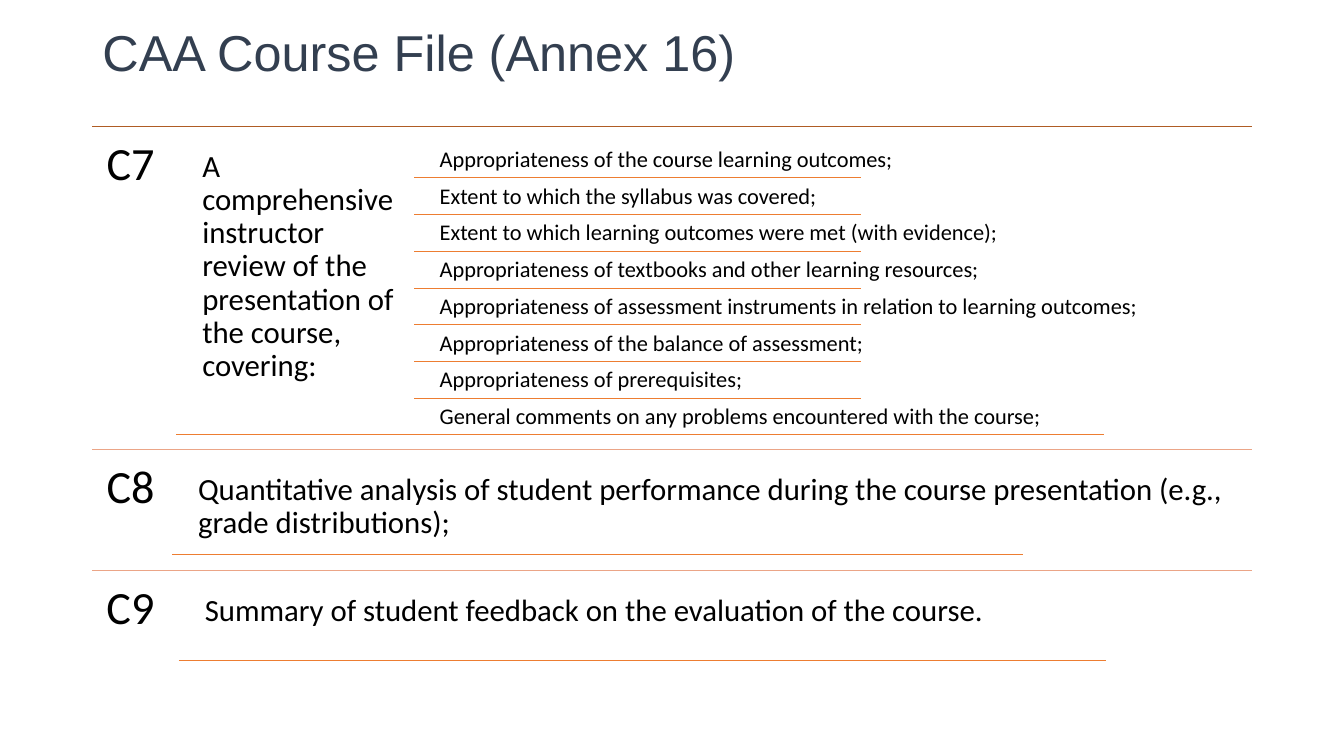
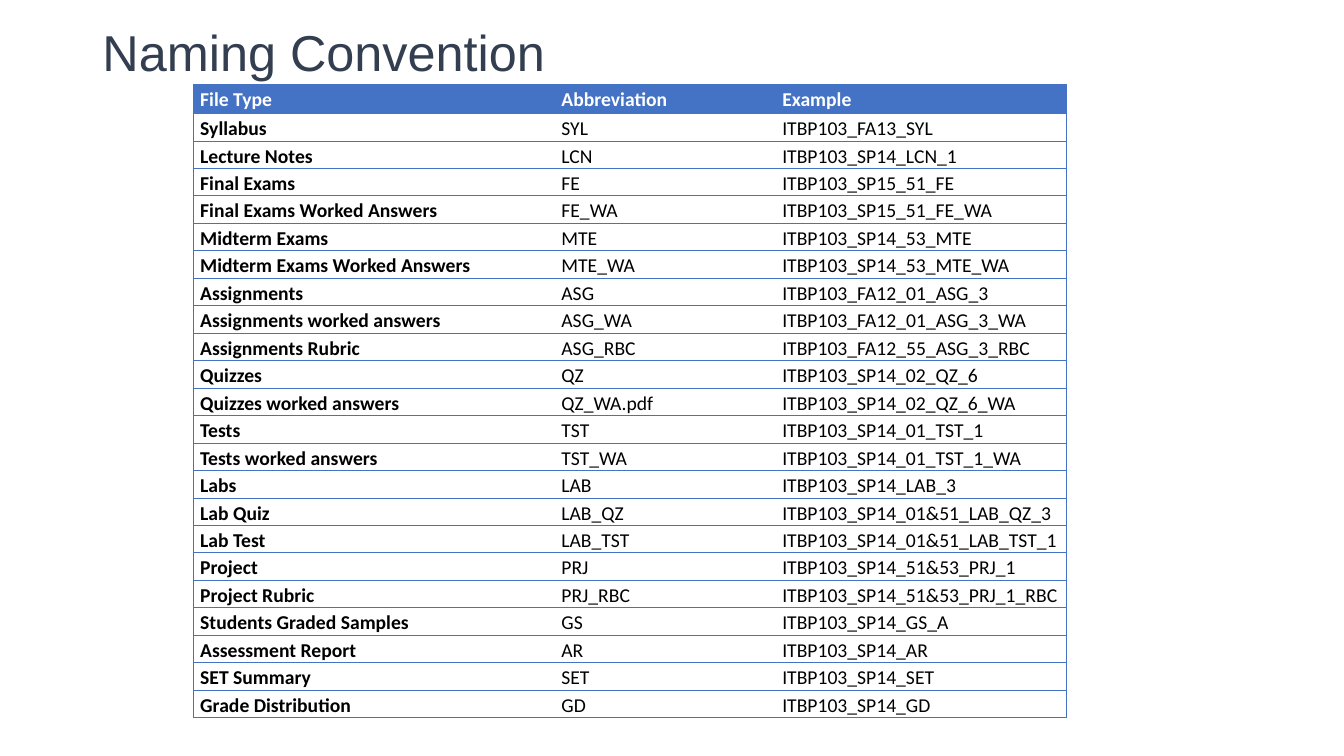
from dataclasses import dataclass

from lxml import etree
from pptx import Presentation
from pptx import util as u
from pptx.dml.color import RGBColor
from pptx.enum import shapes, text
from pptx.oxml import ns


@dataclass(frozen=True)
class Theme:
    title_color: RGBColor = RGBColor.from_string("333F50")
    ink: RGBColor = RGBColor.from_string("000000")
    white: RGBColor = RGBColor.from_string("FFFFFF")
    top_rule: RGBColor = RGBColor.from_string("AF5C24")
    section_rule: RGBColor = RGBColor.from_string("EBA587")
    item_rule: RGBColor = RGBColor.from_string("ED7D31")
    table_blue: RGBColor = RGBColor.from_string("4472C4")
    title_font: str = "Arial"
    body_font: str = "Calibri"
    title_size: u.Pt = u.Pt(36)
    code_size: u.Pt = u.Pt(33)
    statement_size: u.Pt = u.Pt(22)
    item_size: u.Pt = u.Pt(16)
    table_size: u.Pt = u.Pt(14)
    rule_width: u.Pt = u.Pt(0.5)


theme = Theme()
deck = Presentation()
deck.slide_width, deck.slide_height = u.Inches(13.333), u.Inches(7.5)
cell_size = deck.slide_width / 160
LEFT, RIGHT = 11, 149


def grid(*cells):
    """Turn counts of cells, on a grid of 160 columns by 90 rows, into lengths."""
    return [u.Emu(round(count * cell_size)) for count in cells]


def add_text(page, words, place, size, inset):
    box = page.shapes.add_textbox(*grid(*place))
    frame = box.text_frame
    frame.word_wrap = True
    for side in ("left", "top", "right", "bottom"):
        setattr(frame, f"margin_{side}", u.Inches(inset))
    para = frame.paragraphs[0]
    para.line_spacing = 0.9
    span = para.add_run()
    span.text = words
    span.font.name, span.font.size = theme.body_font, size
    span.font.color.rgb = theme.ink


# Titles
title_layout = deck.slide_layouts.get_by_name("Title Only")
title_place = dict(zip(("left", "top", "width", "height"), grid(LEFT, 1.8, 106.7, 9.6)))
pages = []
for heading in ("CAA Course File (Annex 16)", "Naming Convention"):
    page = deck.slides.add_slide(title_layout)
    title = page.shapes.title
    for name, value in title_place.items():
        setattr(title, name, value)
    title.text_frame.text = heading
    title.text_frame.vertical_anchor = text.MSO_ANCHOR.MIDDLE
    para = title.text_frame.paragraphs[0]
    para.alignment, para.line_spacing = text.PP_ALIGN.LEFT, 0.9
    para.font.name, para.font.size = theme.title_font, theme.title_size
    para.font.color.rgb = theme.title_color
    pages.append(page)
course_page, naming_page = pages

# Course file sections: code, top, code width, statement width and height,
# underline length, statement
sections = [
    ("C7", 15, 10, 26.3, 34.9, 110.4,
     "A comprehensive instructor review of the presentation of the course, covering:"),
    ("C8", 53.5, 9.5, 126.5, 10.6, 101.3,
     "Quantitative analysis of student performance during the course presentation "
     "(e.g., grade distributions);"),
    ("C9", 67.9, 10.3, 120, 8.9, 110.4,
     "Summary of student feedback on the evaluation of the course."),
]
review_items = [
    "Appropriateness of the course learning outcomes;",
    "Extent to which the syllabus was covered;",
    "Extent to which learning outcomes were met (with evidence);",
    "Appropriateness of textbooks and other learning resources;",
    "Appropriateness of assessment instruments in relation to learning outcomes;",
    "Appropriateness of the balance of assessment;",
    "Appropriateness of prerequisites;",
    "General comments on any problems encountered with the course;",
]
rules = []  # start column, end column, row, colour

for number, (code, top, code_width, width, height, underline, statement) in enumerate(sections):
    statement_left, statement_top = LEFT + code_width, top + 1.85
    rules.append((LEFT, RIGHT, top, theme.section_rule if number else theme.top_rule))
    rules.append((statement_left, statement_left + underline,
                  statement_top + height, theme.item_rule))
    add_text(course_page, code, (LEFT, top, code_width, 10), theme.code_size, 0.14)
    add_text(course_page, statement, (statement_left + 2, statement_top, width, height),
             theme.statement_size, 0.09)

item_top, item_height = 16.8, 4.37
for number, item in enumerate(review_items):
    top = item_top + number * item_height
    add_text(course_page, item, (51.5, top, 97.2, item_height), theme.item_size, 0.07)
    if number:
        rules.append((49.3, 102.5, top, theme.item_rule))

for start, end, row, color in rules:
    rule = course_page.shapes.add_connector(
        shapes.MSO_CONNECTOR.STRAIGHT, *grid(start, row, end, row))
    rule.line.color.rgb, rule.line.width = color, theme.rule_width
    etree.SubElement(rule._element.spPr, ns.qn("a:effectLst"))

# Naming table
naming_rows = [
    ("File Type", "Abbreviation", "Example"),
    ("Syllabus", "SYL", "ITBP103_FA13_SYL"),
    ("Lecture Notes", "LCN", "ITBP103_SP14_LCN_1"),
    ("Final Exams", "FE", "ITBP103_SP15_51_FE"),
    ("Final Exams Worked Answers", "FE_WA", "ITBP103_SP15_51_FE_WA"),
    ("Midterm Exams", "MTE", "ITBP103_SP14_53_MTE"),
    ("Midterm Exams Worked Answers", "MTE_WA", "ITBP103_SP14_53_MTE_WA"),
    ("Assignments", "ASG", "ITBP103_FA12_01_ASG_3"),
    ("Assignments worked answers", "ASG_WA", "ITBP103_FA12_01_ASG_3_WA"),
    ("Assignments Rubric", "ASG_RBC", "ITBP103_FA12_55_ASG_3_RBC"),
    ("Quizzes", "QZ", "ITBP103_SP14_02_QZ_6"),
    ("Quizzes worked answers", "QZ_WA.pdf", "ITBP103_SP14_02_QZ_6_WA"),
    ("Tests", "TST", "ITBP103_SP14_01_TST_1"),
    ("Tests worked answers", "TST_WA", "ITBP103_SP14_01_TST_1_WA"),
    ("Labs", "LAB", "ITBP103_SP14_LAB_3"),
    ("Lab Quiz", "LAB_QZ", "ITBP103_SP14_01&51_LAB_QZ_3"),
    ("Lab Test", "LAB_TST", "ITBP103_SP14_01&51_LAB_TST_1"),
    ("Project", "PRJ", "ITBP103_SP14_51&53_PRJ_1"),
    ("Project Rubric", "PRJ_RBC", "ITBP103_SP14_51&53_PRJ_1_RBC"),
    ("Students Graded Samples", "GS", "ITBP103_SP14_GS_A"),
    ("Assessment Report", "AR", "ITBP103_SP14_AR"),
    ("SET Summary", "SET", "ITBP103_SP14_SET"),
    ("Grade Distribution", "GD", "ITBP103_SP14_GD"),
]
column_widths = (43, 26.3, 34.7)
header_height, row_height = 3.5, 3.27
table_height = header_height + row_height * (len(naming_rows) - 1)
table = naming_page.shapes.add_table(
    len(naming_rows), len(column_widths),
    *grid(23, 10, sum(column_widths), table_height)).table
table.horz_banding = False
for column, width in zip(table.columns, grid(*column_widths)):
    column.width = width

cell_format = {
    "margin_left": u.Inches(0.07), "margin_right": u.Inches(0.07),
    "margin_top": 0, "margin_bottom": 0,
}
last_column = len(column_widths) - 1
for row_number, words in enumerate(naming_rows):
    is_header = row_number == 0
    table.rows[row_number].height = grid(header_height if is_header else row_height)[0]
    for column_number, word in enumerate(words):
        cell = table.cell(row_number, column_number)
        for name, value in cell_format.items():
            setattr(cell, name, value)
        cell.text = word
        para = cell.text_frame.paragraphs[0]
        para.alignment, para.line_spacing = text.PP_ALIGN.JUSTIFY, 1.15
        font = para.runs[0].font
        font.name, font.size = theme.body_font, theme.table_size
        font.bold = is_header or column_number == 0
        font.color.rgb = theme.white if is_header else theme.ink

        borders = {"lnL": column_number == 0, "lnR": column_number == last_column,
                   "lnT": True, "lnB": True}
        properties = cell._tc.get_or_add_tcPr()
        for tag, is_drawn in borders.items():
            border = etree.SubElement(properties, ns.qn(f"a:{tag}"), w=str(theme.rule_width))
            if is_drawn:
                fill = etree.SubElement(border, ns.qn("a:solidFill"))
                etree.SubElement(fill, ns.qn("a:srgbClr"), val=str(theme.table_blue))
            else:
                etree.SubElement(border, ns.qn("a:noFill"))
        if is_header:
            cell.fill.solid()
            cell.fill.fore_color.rgb = theme.table_blue
        else:
            cell.fill.background()

deck.save("out.pptx")
